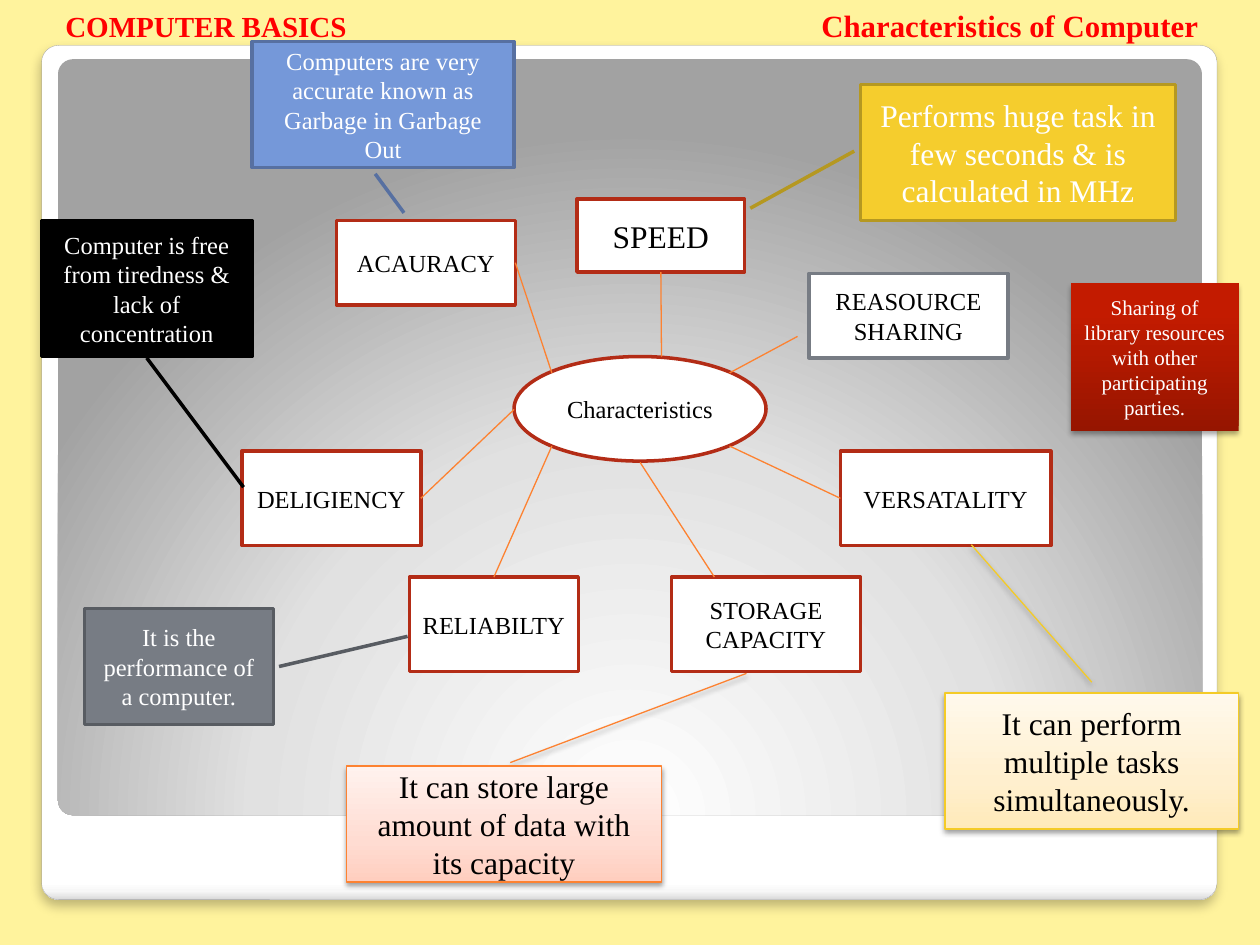
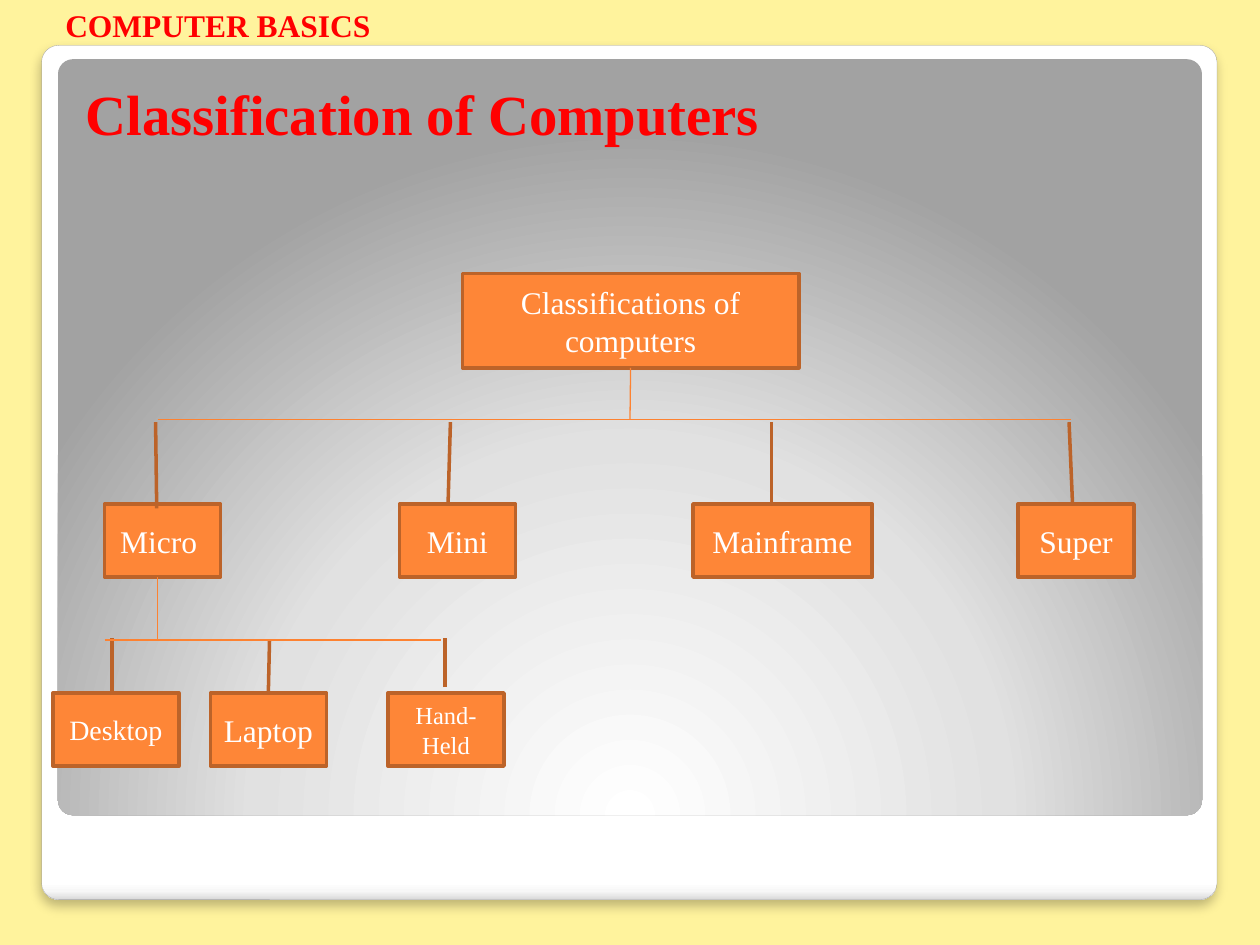
from lxml import etree
from pptx import Presentation
from pptx.dml.color import RGBColor
from pptx.enum import shapes, text
from pptx.oxml.ns import qn
from pptx.util import Inches, Pt

FONT = "Times New Roman"
COLORS = {
    "background": "FFF39D", "white": "FFFFFF", "black": "000000", "heading": "FF0000",
    "panel_edge": "A4A4A4", "node_edge": "B32C16", "gray": "777C84", "gray_edge": "585C62",
    "connector": "FD8231", "yellow": "F5CD2D", "yellow_edge": "B59821", "pale_edge": "F4CB27",
    "blue": "7598D9", "blue_edge": "5770A1", "orange": "FE8637", "orange_edge": "BC6329",
}
# Gradients: stops as (percent, colour), then an angle or the rectangle a circle runs to
GRADIENTS = {
    "frame": ([(0, "FFFFFF"), (98, "FFFFFF"), (99, "F7F7F7"), (100, "DADADA")], 90),
    "panel": ([(0, "FFFFFF"), (55, "E1E1E1"), (100, "A2A2A2")],
              {"l": 50, "t": 175, "r": 50, "b": -75}),
    "peach": ([(0, "FFCEBF"), (35, "FFDCD2"), (100, "FFF2EE")], 270),
    "cream": ([(0, "FFEAB9"), (35, "FFEFCE"), (100, "FFF9EC")], 270),
    "red": ([(0, "961500"), (80, "C31B00"), (100, "C41B00")], 270),
}
# Shadows: opacity percent, blur and distance in points
FRAME_SHADOW, NOTE_SHADOW, RED_SHADOW = (25, 6, 4), (38, 3.1, 1.6), (35, 3.1, 1.8)

COURSE = "COMPUTER BASICS"
TOPIC = "Characteristics of Computer"
TITLE = "Classification of Computers"

HUB = ("Characteristics", (4.08, 2.83, 2, 0.83))
# Label, box, edge colour, text size
TRAITS = [
    ("ACAURACY", (2.67, 1.75, 1.42, 0.67), "node_edge", 14),
    ("DELIGIENCY", (1.92, 3.58, 1.42, 0.75), "node_edge", 14),
    ("RELIABILTY", (3.25, 4.58, 1.34, 0.75), "node_edge", 14),
    ("STORAGE CAPACITY", (5.33, 4.58, 1.5, 0.75), "node_edge", 14),
    ("VERSATALITY", (6.67, 3.58, 1.67, 0.75), "node_edge", 14),
    ("REASOURCE SHARING", (6.42, 2.17, 1.58, 0.67), "gray", 14),
    ("SPEED", (4.58, 1.58, 1.33, 0.58), "node_edge", 18),
]
# Trait, point on the hub, point at the trait, side of the trait to join
SPOKES = [
    ("SPEED", (5.25, 2.83), (5.25, 2.17), 2),
    ("REASOURCE SHARING", (5.79, 2.96), (6.33, 2.67), None),
    ("VERSATALITY", (5.79, 3.54), (6.67, 3.96), 1),
    ("STORAGE CAPACITY", (5.08, 3.67), (5.67, 4.58), None),
    ("RELIABILTY", (4.38, 3.54), (3.92, 4.58), 0),
    ("DELIGIENCY", (4.08, 3.25), (3.33, 3.96), 3),
    ("ACAURACY", (4.38, 2.96), (4.08, 2.08), 3),
]
# Explanation, box, leader, format
NOTES = [
    ("Performs huge task in few seconds & is calculated in MHz",
     (6.83, 0.67, 2.5, 1.08), (0.49, -0.02, 0.91, -0.35),
     dict(fill="yellow", edge="yellow_edge", size=18)),
    ("Computers are very accurate known as Garbage in Garbage Out",
     (2, 0.33, 2.08, 1), (1.05, 0.47, 1.36, 0.58),
     dict(fill="blue", edge="blue_edge")),
    ("Computer is free from tiredness & lack of concentration",
     (0.33, 1.75, 1.67, 1.08), (1.01, 0.5, 1.96, 0.96),
     dict(fill="black", edge="black")),
    ("It is the performance of a computer.",
     (0.67, 4.83, 1.5, 0.92), (0.24, 1.71, 0.5, 1.03),
     dict(fill="gray", edge="gray_edge")),
    ("It can store large amount of data with its capacity",
     (2.75, 6.08, 2.5, 0.92), (-0.8, 1.27, -0.03, 0.52),
     dict(fill="peach", edge="connector", weight=0.75, shadow=NOTE_SHADOW,
          size=18, color="black")),
    ("It can perform multiple tasks simultaneously.",
     (7.5, 5.5, 2.33, 1.08), (-0.08, 0.5, -1.09, 0.09),
     dict(fill="cream", edge="pale_edge", weight=0.75, shadow=NOTE_SHADOW,
          size=18, color="black")),
    ("Sharing of library resources with other participating parties.",
     (8.5, 2.25, 1.33, 1.17), (0.49, 0, 0.28, -0.4),
     dict(fill="red", shadow=RED_SHADOW, size=12)),
]

ROOT = ("Classifications of computers", (3.67, 2.17, 2.67, 0.75))
CLASS_HEIGHT = 0.58
# Top of each row, then its members: label, left, width, text size, leader
CLASS_ROWS = [
    (4, [
        ("Micro ", 0.83, 0.92, 18, (0.06, 0.45, -1.12, 0.44)),
        ("Mini", 3.17, 0.92, 18, (-0.02, 0.42, -1.12, 0.44)),
        ("Mainframe", 5.5, 1.42, 18, (-0.02, 0.44, -1.12, 0.44)),
        ("Super", 8.08, 0.92, 18, (0, 0.47, -1.12, 0.44)),
    ]),
    (5.5, [
        ("Desktop", 0.42, 1, 16, (0.03, 0.47, -0.75, 0.47)),
        ("Laptop", 1.67, 0.92, 18, (-0.02, 0.5, -0.72, 0.51)),
        ("Hand-Held", 3.08, 0.92, 14, (-0.08, 0.49, -0.75, 0.49)),
    ]),
]
BRANCHES = [((1.25, 3.33), (8.5, 3.33)), ((1.25, 4.58), (1.25, 5.08)),
            ((0.83, 5.08), (3.5, 5.08))]


def rgb(name):
    return RGBColor.from_string(COLORS[name])


def add_element(parent, tag, **attributes):
    values = {key: str(value) for key, value in attributes.items()}
    return etree.SubElement(parent, qn(tag), values)


def set_gradient(shape, name):
    stops, direction = GRADIENTS[name]
    shape.fill.gradient()
    gradient = shape._element.spPr.find(qn("a:gradFill"))
    for child in list(gradient):
        gradient.remove(child)
    stop_list = add_element(gradient, "a:gsLst")
    for percent, color in stops:
        stop = add_element(stop_list, "a:gs", pos=percent * 1000)
        add_element(stop, "a:srgbClr", val=color)
    if isinstance(direction, dict):
        circle = add_element(gradient, "a:path", path="circle")
        add_element(circle, "a:fillToRect", **{k: v * 1000 for k, v in direction.items()})
    else:
        add_element(gradient, "a:lin", ang=direction * 60000, scaled=0)


def set_shadow(shape, opacity, blur, distance):
    effects = shape._element.spPr.find(qn("a:effectLst"))
    outer = add_element(effects, "a:outerShdw", blurRad=Pt(blur), dist=Pt(distance),
                        dir=90 * 60000, algn="ctr", rotWithShape=0)
    color = add_element(outer, "a:srgbClr", val=COLORS["black"])
    add_element(color, "a:alpha", val=opacity * 1000)


def write_text(shape, *runs, color="white", bold=False,
               align=text.PP_ALIGN.CENTER, anchor=text.MSO_ANCHOR.MIDDLE):
    """Fill the shape with one paragraph of (words, size) runs."""
    frame = shape.text_frame
    frame.word_wrap = True
    frame.vertical_anchor = anchor
    paragraph = frame.paragraphs[0]
    paragraph.alignment = align
    for words, size in runs:
        run = paragraph.add_run()
        run.text = words
        run.font.name = FONT
        run.font.size = Pt(size)
        run.font.bold = bold
        run.font.color.rgb = rgb(color)
    return paragraph


def add_box(slide, kind, box, fill, edge=None, weight=2, shadow=None, adjust=(),
            words=None, size=14, color="white"):
    shape = slide.shapes.add_shape(kind, *map(Inches, box))
    for index, value in enumerate(adjust):
        shape.adjustments[index] = value
    if fill in GRADIENTS:
        set_gradient(shape, fill)
    else:
        shape.fill.solid()
        shape.fill.fore_color.rgb = rgb(fill)
    if edge:
        shape.line.color.rgb = rgb(edge)
        shape.line.width = Pt(weight)
    else:
        shape.line.fill.background()
    shape.shadow.inherit = False
    if shadow:
        set_shadow(shape, *shadow)
    if words:
        write_text(shape, (words, size), color=color)
    return shape


def add_callout(slide, words, box, leader, **style):
    return add_box(slide, shapes.MSO_SHAPE.LINE_CALLOUT_1, box,
                   adjust=leader, words=words, **style)


def add_line(slide, start, end):
    line = slide.shapes.add_connector(shapes.MSO_CONNECTOR.STRAIGHT,
                                      *map(Inches, start + end))
    line.line.color.rgb = rgb("connector")
    line.line.width = Pt(0.75)
    add_element(line._element.spPr, "a:effectLst")
    return line


def add_heading(slide, box, *runs, anchor=text.MSO_ANCHOR.BOTTOM):
    shape = slide.shapes.add_textbox(*map(Inches, box))
    return write_text(shape, *runs, color="heading", bold=True,
                      align=text.PP_ALIGN.LEFT, anchor=anchor)


def add_framed_slide(presentation):
    slide = presentation.slides.add_slide(presentation.slide_layouts[6])
    slide.background.fill.solid()
    slide.background.fill.fore_color.rgb = rgb("background")
    rounded = shapes.MSO_SHAPE.ROUNDED_RECTANGLE
    add_box(slide, rounded, (0.33, 0.36, 9.33, 6.78), "frame", "panel_edge", 0.16,
            FRAME_SHADOW, adjust=[0.02])
    add_box(slide, rounded, (0.46, 0.47, 9.08, 6), "panel", adjust=[0.02])
    return slide


def build_characteristics(presentation):
    slide = add_framed_slide(presentation)
    words, box = HUB
    add_box(slide, shapes.MSO_SHAPE.OVAL, box, "white", "node_edge",
            words=words, color="black")
    traits = {}
    for words, box, edge, size in TRAITS:
        traits[words] = add_box(slide, shapes.MSO_SHAPE.RECTANGLE, box, "white", edge,
                                words=words, size=size, color="black")
    for trait, start, end, side in SPOKES:
        spoke = add_line(slide, start, end)
        if side is not None:
            spoke.end_connect(traits[trait], side)
    for words, box, leader, style in NOTES:
        add_callout(slide, words, box, leader, **style)
    heading = add_heading(slide, (0.42, 0, 9.42, 0.4),
                          (COURSE + "\t", 16.6), (TOPIC, 17.6))
    tabs = add_element(heading._p.get_or_add_pPr(), "a:tabLst")
    add_element(tabs, "a:tab", pos=Inches(6), algn="l")


def build_classification(presentation):
    slide = add_framed_slide(presentation)
    add_heading(slide, (0.58, 0.58, 8.95, 1.15), (TITLE, 32.4),
                anchor=text.MSO_ANCHOR.TOP)
    add_heading(slide, (0.42, 0, 2.67, 0.4), (COURSE, 18))
    words, box = ROOT
    root = add_box(slide, shapes.MSO_SHAPE.RECTANGLE, box, "orange", "orange_edge",
                   words=words, size=18)
    add_line(slide, (5, 2.92), (5, 3.33)).begin_connect(root, 2)
    for top, members in CLASS_ROWS:
        for words, left, width, size, leader in members:
            add_callout(slide, words, (left, top, width, CLASS_HEIGHT), leader,
                        fill="orange", edge="orange_edge", size=size)
    for start, end in BRANCHES:
        add_line(slide, start, end)


def main():
    presentation = Presentation()
    presentation.slide_width, presentation.slide_height = Inches(10), Inches(7.5)
    build_characteristics(presentation)
    build_classification(presentation)
    presentation.save("out.pptx")


if __name__ == "__main__":
    main()
